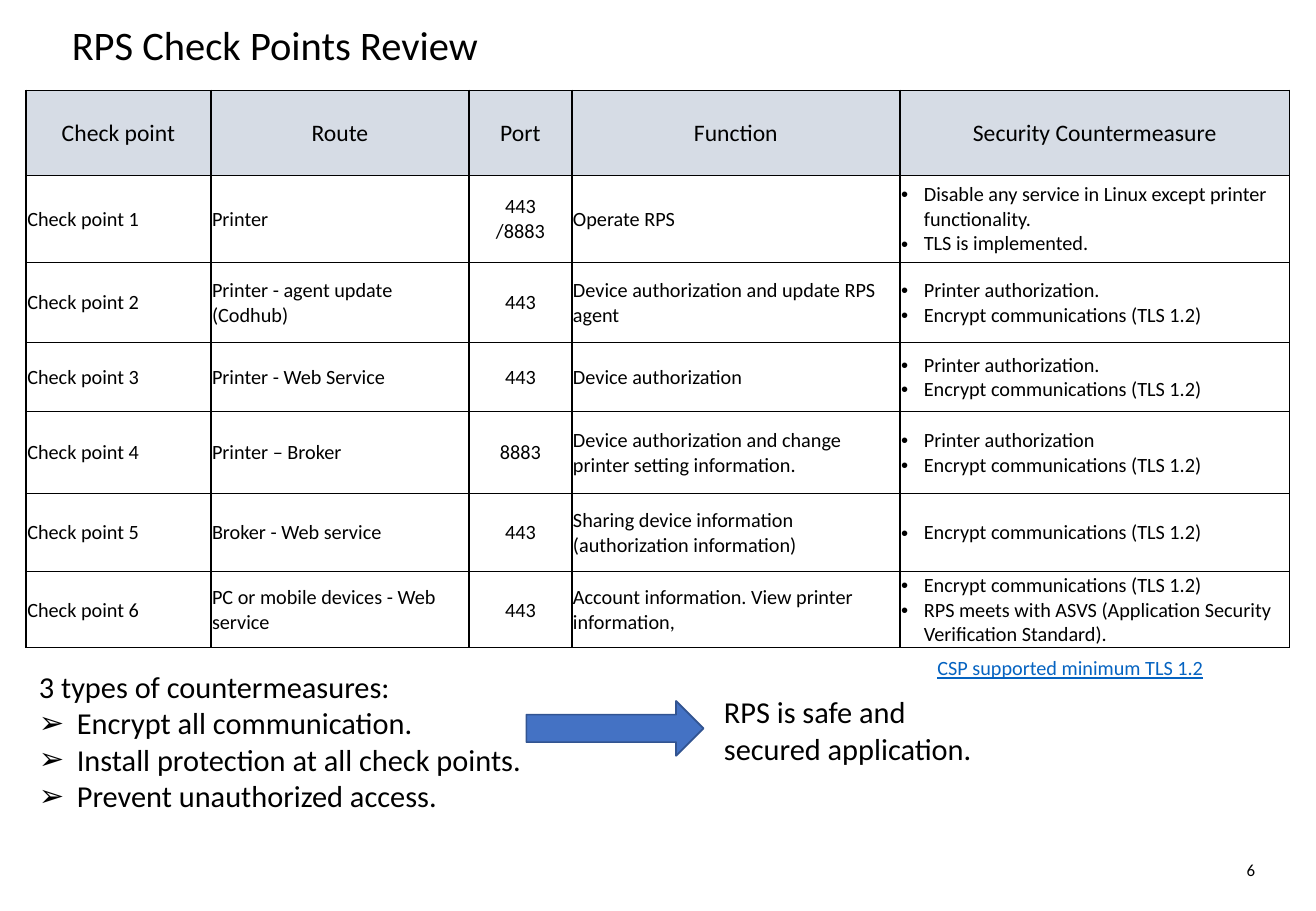
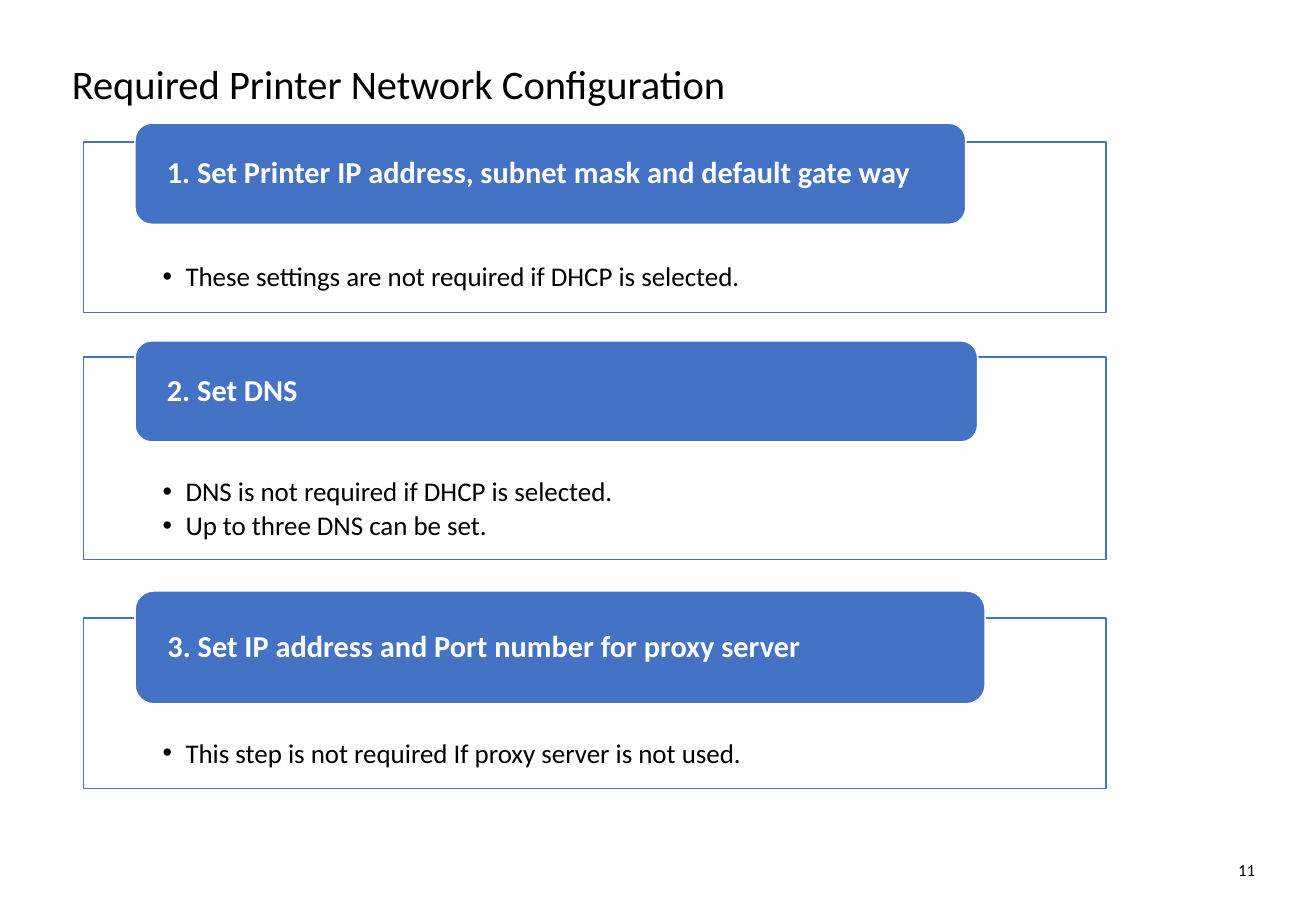
from lxml import etree
from pptx import Presentation
from pptx.dml.color import RGBColor
from pptx.enum import shapes, text
from pptx.oxml import ns
from pptx.util import Pt

rgb = RGBColor.from_string
FONT = "Calibri"
BLACK, WHITE, BLUE = "000000", "FFFFFF", "4472C4"
DARK_BLUE, LINK_BLUE, HEADER_GREY = "325491", "0563C1", "D6DCE5"
LEFT, CENTER, RIGHT = text.PP_ALIGN.LEFT, text.PP_ALIGN.CENTER, text.PP_ALIGN.RIGHT
TOP, MIDDLE = text.MSO_ANCHOR.TOP, text.MSO_ANCHOR.MIDDLE


def write(tf, lines, size, color=BLACK, align=LEFT, bullet=None, indent=0,
          spacing=None, after=0, bold=False, underline=False):
    """Fill a text frame, one paragraph a line; bullets apply to lines from a list."""
    tf.word_wrap = True
    for i, line in enumerate(lines):
        p = tf.paragraphs[0] if i == 0 else tf.add_paragraph()
        p.alignment = align
        p.space_after = Pt(after)
        if spacing:
            p.line_spacing = spacing
        if bullet and not line.endswith(":"):
            pPr = p._p.get_or_add_pPr()
            pPr.set("marL", str(Pt(indent)))
            pPr.set("indent", str(-Pt(indent)))
            etree.SubElement(pPr, ns.qn("a:buFont"), typeface="Arial")
            etree.SubElement(pPr, ns.qn("a:buChar"), char=bullet)
        r = p.add_run()
        r.text = line
        r.font.name = FONT
        r.font.size = Pt(size)
        r.font.color.rgb = rgb(color)
        r.font.bold = bold
        r.font.underline = underline


def add_shape(s, kind, box, fill, line):
    sp = s.shapes.add_shape(kind, *map(Pt, box))
    sp.shadow.inherit = False
    sp.fill.solid()
    sp.fill.fore_color.rgb = rgb(fill)
    sp.line.color.rgb = rgb(line)
    sp.line.width = Pt(1)
    return sp


prs = Presentation()
prs.slide_width, prs.slide_height = Pt(780), Pt(540)

# Slide number and title
slides = []
for title, number, top in [("RPS Check Points Review", "6", 11.5),
                           ("Required Printer Network Configuration", "11", 34.5)]:
    s = prs.slides.add_slide(prs.slide_layouts[6])
    sp = s.shapes.add_textbox(Pt(710), Pt(506), Pt(41), Pt(19.5))
    write(sp.text_frame, [number], 10, align=RIGHT)
    sp = s.shapes.add_textbox(Pt(35.5), Pt(top), Pt(672.5), Pt(52.5))
    write(sp.text_frame, [title], 24, spacing=0.9)
    slides.append(s)
review, network = slides

# Check point table
TLS = "Encrypt communications (TLS 1.2)"
headings = ["Check point", "Route", "Port", "Function", "Security Countermeasure"]
check_points = [
    ("Printer", ["443", "/8883"], "Operate RPS",
     ["Disable any service in Linux except printer functionality.",
      "TLS is implemented."]),
    ("Printer - agent update (Codhub)", ["443"],
     "Device authorization and update RPS agent", ["Printer authorization.", TLS]),
    ("Printer - Web Service", ["443"], "Device authorization",
     ["Printer authorization.", TLS]),
    ("Printer – Broker", ["8883"],
     "Device authorization and change printer setting information.",
     ["Printer authorization", TLS]),
    ("Broker - Web service", ["443"],
     "Sharing device information (authorization information)", [TLS]),
    ("PC or mobile devices - Web service", ["443"],
     "Account information. View printer information,",
     [TLS, "RPS meets with ASVS (Application Security Verification Standard)."]),
]
rows = [[[h] for h in headings]]
for n, (route, ports, function, measures) in enumerate(check_points, 1):
    rows.append([[f"Check point {n}"], [route], ports, [function], measures])

widths = [109.5, 153, 61, 194.5, 231]
heights = [50.5, 51.5, 47.5, 41, 48.5, 46.5, 45]
table = review.shapes.add_table(len(rows), len(widths), Pt(15.5), Pt(53.5),
                                Pt(sum(widths)), Pt(sum(heights))).table
table.first_row = table.horz_banding = False
for column, width in zip(table.columns, widths):
    column.width = Pt(width)
for row, height in zip(table.rows, heights):
    row.height = Pt(height)

for i, row in enumerate(rows):
    for j, lines in enumerate(row):
        cell = table.cell(i, j)
        cell.vertical_anchor = MIDDLE
        cell.margin_left = cell.margin_right = cell.margin_top = Pt(0.7)
        cell.margin_bottom = Pt(0)
        tcPr = cell._tc.get_or_add_tcPr()
        for side in ("lnL", "lnR", "lnT", "lnB"):
            ln = etree.SubElement(tcPr, ns.qn(f"a:{side}"), w=str(Pt(1)))
            fill = etree.SubElement(ln, ns.qn("a:solidFill"))
            etree.SubElement(fill, ns.qn("a:srgbClr"), val=BLACK)
        if i == 0:
            cell.fill.solid()
            cell.fill.fore_color.rgb = rgb(HEADER_GREY)
            write(cell.text_frame, lines, 14, align=CENTER)
        else:
            cell.fill.background()
            write(cell.text_frame, lines, 12, align=CENTER if j == 2 else LEFT,
                  bullet="•" if j == 4 else None, indent=13.5)

# Conclusion below the table
sp = review.shapes.add_textbox(Pt(16), Pt(392.5), Pt(349), Pt(94.5))
write(sp.text_frame, ["3 types of countermeasures:", "Encrypt all communication.",
                      "Install protection at all check points.",
                      "Prevent unauthorized access."], 18, bullet="➢", indent=22.5)
sp = review.shapes.add_textbox(Pt(548.5), Pt(385), Pt(193), Pt(22))
write(sp.text_frame, ["CSP supported minimum TLS 1.2"], 12, LINK_BLUE, underline=True)
add_shape(review, shapes.MSO_SHAPE.RIGHT_ARROW, (312, 415.5, 105, 32.5), BLUE, DARK_BLUE)
sp = review.shapes.add_textbox(Pt(422), Pt(407.5), Pt(162), Pt(51))
write(sp.text_frame, ["RPS is safe and secured application."], 18)

# Configuration steps: card top and height, header top, width and height
steps = [
    ("1. Set Printer IP address, subnet mask and default gate way",
     ["These settings are not required if DHCP is selected."],
     (84.25, 101), (73, 492.5, 60)),
    ("2. Set DNS",
     ["DNS is not required if DHCP is selected.", "Up to three DNS can be set."],
     (211.75, 120), (202, 499.5, 60)),
    ("3. Set IP address and Port number for proxy server",
     ["This step is not required If proxy server is not used."],
     (366.5, 101), (350.25, 504, 67)),
]
for heading, notes, (top, height), (head_top, head_width, head_height) in steps:
    card = add_shape(network, shapes.MSO_SHAPE.RECTANGLE,
                     (49.5, top, 606, height), WHITE, BLUE)
    tf = card.text_frame
    tf.vertical_anchor = TOP
    tf.margin_left = tf.margin_right = Pt(47)
    tf.margin_top, tf.margin_bottom = Pt(72), Pt(8.5)
    write(tf, notes, 16, bullet="•", indent=13.5, spacing=0.9, after=2.4)

    header = add_shape(network, shapes.MSO_SHAPE.ROUNDED_RECTANGLE,
                       (80, head_top, head_width, head_height), BLUE, WHITE)
    tf = header.text_frame
    tf.vertical_anchor = MIDDLE
    tf.margin_left = tf.margin_right = Pt(16)
    tf.margin_top = tf.margin_bottom = Pt(0)
    write(tf, [heading], 18, WHITE, spacing=0.9, bold=True)

prs.save("out.pptx")
